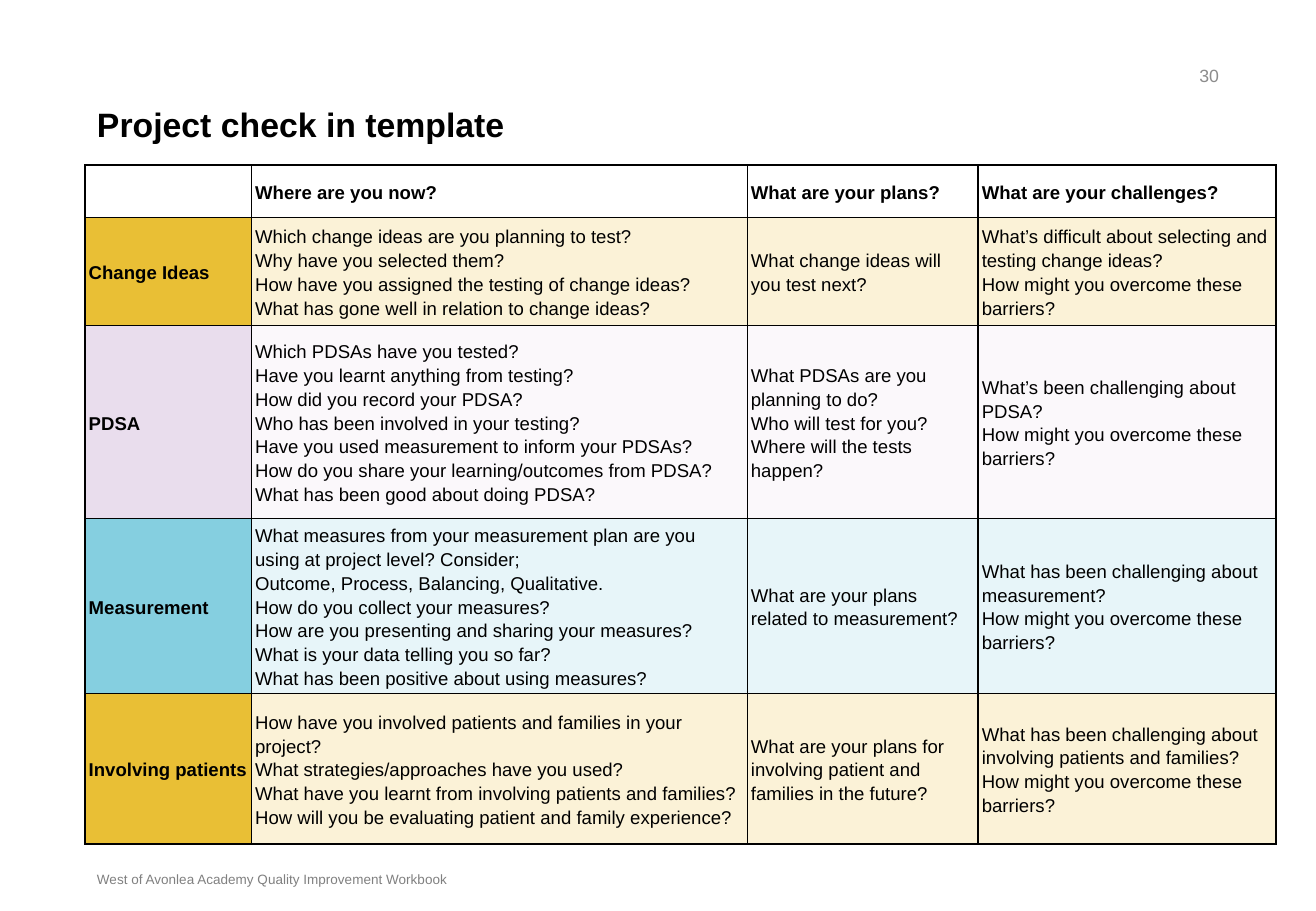
from lxml.etree import SubElement
from pptx import Presentation
from pptx.dml.color import RGBColor
from pptx.enum.text import MSO_ANCHOR, PP_ALIGN
from pptx.oxml.ns import qn
from pptx.util import Inches, Pt

COLORS = {
    "black": "000000", "white": "FFFFFF", "number": "8C8C8C", "footer": "808080",
    "gold": "E9BF35", "cream": "FBF2D7", "lilac": "E9DDED", "pale lilac": "FBF8FB",
    "blue": "85CFE0", "pale blue": "E7F5F9",
}
BARRIERS = "How might you overcome these barriers?"
HEADER = ["", "Where are you now?", "What are your plans?", "What are your challenges?"]
TOPICS = [
    ("Change Ideas", "gold", "cream",
     ["Which change ideas are you planning to test?",
      "Why have you selected them?",
      "How have you assigned the testing of change ideas?",
      "What has gone well in relation to change ideas?"],
     ["What change ideas will you test next?"],
     ["What’s difficult about selecting and testing change ideas?", BARRIERS]),
    ("PDSA", "lilac", "pale lilac",
     ["Which PDSAs have you tested?",
      "Have you learnt anything from testing?",
      "How did you record your PDSA?",
      "Who has been involved in your testing?",
      "Have you used measurement to inform your PDSAs?",
      "How do you share your learning/outcomes from PDSA?",
      "What has been good about doing PDSA?"],
     ["What PDSAs are you planning to do?",
      "Who will test for you?",
      "Where will the tests happen?"],
     ["What’s been challenging about PDSA?", BARRIERS]),
    ("Measurement", "blue", "pale blue",
     ["What measures from your measurement plan are you using at project level? Consider;",
      "Outcome, Process, Balancing, Qualitative.",
      "How do you collect your measures?",
      "How are you presenting and sharing your measures?",
      "What is your data telling you so far?",
      "What has been positive about using measures?"],
     ["What are your plans related to measurement?"],
     ["What has been challenging about measurement?", BARRIERS]),
    ("Involving patients", "gold", "cream",
     ["How have you involved patients and families in your project?",
      "What strategies/approaches have you used?",
      "What have you learnt from involving patients and families?",
      "How will you be evaluating patient and family experience?"],
     ["What are your plans for involving patient and families in the future?"],
     ["What has been challenging about involving patients and families?", BARRIERS]),
]
COLS = [1.37, 4.08, 1.9, 2.45]
ROWS = [0.43, 0.89, 1.59, 1.44, 1.24]
TEXTS = [
    ("Project check in template", (0.7, 0.84, 9.43, 0.77), 20, "black", True,
     PP_ALIGN.LEFT, MSO_ANCHOR.TOP, 0.9),
    ("30", (7.79, 0.42, 2.34, 0.4), 10.5, "number", False,
     PP_ALIGN.RIGHT, MSO_ANCHOR.MIDDLE, 1.0),
    ("West of Avonlea Academy Quality Improvement Workbook", (0.7, 6.95, 6.73, 0.4), 8,
     "footer", False, PP_ALIGN.LEFT, MSO_ANCHOR.BOTTOM, 1.0),
]


def rgb(name):
    return RGBColor.from_string(COLORS[name])


def write(tf, lines, size, color, bold, align, spacing):
    tf.text = "\n".join(lines)
    for p in tf.paragraphs:
        p.alignment = align
        p.line_spacing = spacing
        p.font.name = "Arial"
        p.font.size = Pt(size)
        p.font.bold = bold
        p.font.color.rgb = rgb(color)


def add_borders(cell):
    tc_pr = cell._tc.get_or_add_tcPr()
    for i, side in enumerate(("lnL", "lnR", "lnT", "lnB")):
        ln = SubElement(tc_pr, qn(f"a:{side}"), w=str(Pt(1)))
        fill = SubElement(ln, qn("a:solidFill"))
        SubElement(fill, qn("a:srgbClr"), val=COLORS["black"])
        tc_pr.insert(i, ln)


def fill_cell(cell, lines, color, bold):
    cell.fill.solid()
    cell.fill.fore_color.rgb = rgb(color)
    cell.margin_left = cell.margin_right = Inches(0.03)
    cell.margin_top = cell.margin_bottom = Inches(0.02)
    cell.vertical_anchor = MSO_ANCHOR.MIDDLE
    write(cell.text_frame, lines, 11, "black", bold, PP_ALIGN.LEFT, 1.15)
    add_borders(cell)


def add_table(s):
    frame = s.shapes.add_table(len(ROWS), len(COLS), Inches(0.7), Inches(1.36),
                               Inches(sum(COLS)), Inches(sum(ROWS)))
    table = frame.table
    table.horz_banding = False
    for col, width in zip(table.columns, COLS):
        col.width = Inches(width)
    for row, height in zip(table.rows, ROWS):
        row.height = Inches(height)
    for c, heading in enumerate(HEADER):
        fill_cell(table.cell(0, c), [heading], "white", True)
    for r, (topic, dark, light, *questions) in enumerate(TOPICS, 1):
        fill_cell(table.cell(r, 0), [topic], dark, True)
        for c, lines in enumerate(questions, 1):
            fill_cell(table.cell(r, c), lines, light, False)


def main():
    prs = Presentation()
    prs.slide_width, prs.slide_height = Inches(10.83), Inches(7.5)
    s = prs.slides.add_slide(prs.slide_layouts[6])
    add_table(s)
    for text, box, size, color, bold, align, anchor, spacing in TEXTS:
        tf = s.shapes.add_textbox(*map(Inches, box)).text_frame
        tf.word_wrap = True
        tf.vertical_anchor = anchor
        write(tf, [text], size, color, bold, align, spacing)
    prs.save("out.pptx")


if __name__ == "__main__":
    main()
